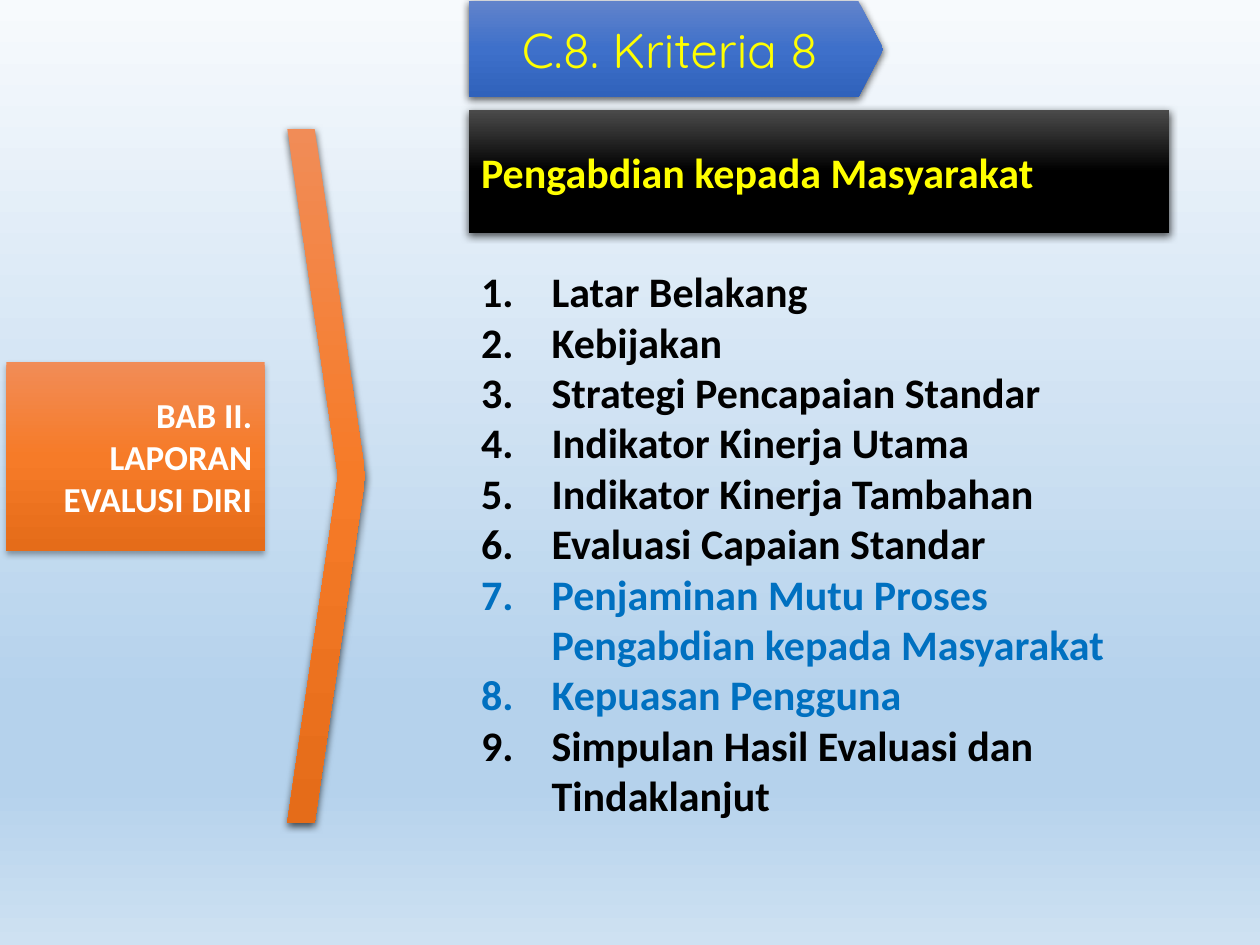
from lxml.etree import SubElement
from pptx import Presentation
from pptx.dml.color import RGBColor
from pptx.enum.shapes import MSO_SHAPE
from pptx.enum.text import MSO_ANCHOR, MSO_AUTO_SIZE, PP_ALIGN
from pptx.oxml.ns import qn
from pptx.util import Inches, Pt

BLACK = RGBColor(0x00, 0x00, 0x00)
WHITE = RGBColor(0xFF, 0xFF, 0xFF)
YELLOW = RGBColor(0xFF, 0xFF, 0x00)
BLUE = RGBColor(0x00, 0x70, 0xC0)

# Gradient stops: position in percent, colour
SKY = [(0, RGBColor(0xF7, 0xFA, 0xFD)), (74, RGBColor(0xB5, 0xD2, 0xEC)),
       (83, RGBColor(0xB5, 0xD2, 0xEC)), (100, RGBColor(0xCE, 0xE1, 0xF2))]
DARK = [(0, RGBColor(0x4B, 0x4B, 0x4B)), (50, BLACK), (100, BLACK)]
ORANGE = [(0, RGBColor(0xF1, 0x8C, 0x57)), (50, RGBColor(0xF6, 0x7B, 0x28)),
          (100, RGBColor(0xE5, 0x6C, 0x19))]
NAVY = [(0, RGBColor(0x61, 0x83, 0xCB)), (50, RGBColor(0x3E, 0x70, 0xCA)),
        (100, RGBColor(0x30, 0x62, 0xBB))]

ITEMS = [
    ("Latar Belakang", BLACK),
    ("Kebijakan", BLACK),
    ("Strategi Pencapaian Standar", BLACK),
    ("Indikator Kinerja Utama", BLACK),
    ("Indikator Kinerja Tambahan", BLACK),
    ("Evaluasi Capaian Standar", BLACK),
    ("Penjaminan Mutu Proses Pengabdian kepada Masyarakat", BLUE),
    ("Kepuasan Pengguna", BLUE),
    ("Simpulan Hasil Evaluasi dan Tindaklanjut", BLACK),
]


def add_color(parent, color, alpha=None):
    node = SubElement(parent, qn("a:srgbClr"), val=str(color))
    if alpha is not None:
        SubElement(node, qn("a:alpha"), val=str(alpha * 1000))


def shade(fill, root, stops):
    """Fill from top to bottom; root is the XML element that holds the fill."""
    fill.gradient()
    fill.gradient_angle = 270
    group = next(root.iter(qn("a:gsLst")))
    for old in list(group):
        group.remove(old)
    for pos, color in stops:
        add_color(SubElement(group, qn("a:gs"), pos=str(pos * 1000)), color)


def add_shadow(shape, alpha, blur, dist):
    shape.shadow.inherit = False
    effects = shape._element.spPr.find(qn("a:effectLst"))
    outer = SubElement(effects, qn("a:outerShdw"), blurRad=str(Pt(blur)),
                       dist=str(Pt(dist)), dir="5400000", rotWithShape="0")
    add_color(outer, BLACK, alpha)


def style(par, size, color, font="Calibri", bold=True):
    for run in par.runs:
        run.font.size = Pt(size)
        run.font.name = font
        run.font.bold = bold
        run.font.color.rgb = color


def add_block(slide, kind, box, stops, shadow=(63, 4.5, 1.5), adjust=None):
    shape = slide.shapes.add_shape(kind, *map(Inches, box))
    shade(shape.fill, shape._element.spPr, stops)
    shape.line.fill.background()
    add_shadow(shape, *shadow)
    if adjust is not None:
        shape.adjustments[0] = adjust
    return shape


def add_label(shape, text, align, size, color, **look):
    frame = shape.text_frame
    frame.text = text
    frame.word_wrap = True
    frame.vertical_anchor = MSO_ANCHOR.MIDDLE
    par = frame.paragraphs[0]
    par.alignment = align
    style(par, size, color, **look)


def add_chapter(slide, box):
    """Orange chapter box and the tall chevron to its right."""
    left, top, width, height = box
    card = add_block(slide, MSO_SHAPE.RECTANGLE, (left, top + 1.85, 2.05, 1.5),
                     ORANGE, shadow=(32, 3.5, 2.2))
    add_label(card, "BAB II. LAPORAN EVALUSI DIRI", PP_ALIGN.RIGHT, 20, WHITE)
    add_block(slide, MSO_SHAPE.CHEVRON, (left + width - 0.62, top, 0.62, height),
              ORANGE, adjust=0.65)


def add_heading(slide, box):
    """Criterion tag above the black title bar."""
    left, top, width, height = box
    bar = add_block(slide, MSO_SHAPE.RECTANGLE,
                    (left, top + height - 0.98, width, 0.98), DARK)
    add_label(bar, "Pengabdian kepada Masyarakat", PP_ALIGN.LEFT, 24, YELLOW)
    tag = add_block(slide, MSO_SHAPE.PENTAGON, (left, top, 3.29, 0.76), NAVY,
                    adjust=0.26)
    add_label(tag, "C.8. Kriteria 8", PP_ALIGN.CENTER, 28, YELLOW,
              font="Quicksand", bold=False)


def add_list(slide, box):
    frame = slide.shapes.add_textbox(*map(Inches, box)).text_frame
    frame.word_wrap = True
    frame.auto_size = MSO_AUTO_SIZE.SHAPE_TO_FIT_TEXT
    frame.text = "\n".join(text for text, _ in ITEMS)
    for par, (_, color) in zip(frame.paragraphs, ITEMS):
        style(par, 24, color)
        props = par._p.get_or_add_pPr()
        props.set("marL", str(Inches(0.56)))
        props.set("indent", str(-Inches(0.56)))
        SubElement(props, qn("a:buFont"), typeface="+mj-lt")
        SubElement(props, qn("a:buAutoNum"), type="arabicPeriod")


def main():
    deck = Presentation()
    deck.slide_width, deck.slide_height = Inches(10), Inches(7.5)
    slide = deck.slides.add_slide(deck.slide_layouts[6])
    shade(slide.background.fill, slide._element, SKY)
    add_heading(slide, (3.72, 0.01, 5.56, 1.84))
    add_list(slide, (3.72, 2.06, 5.56, 4.54))
    add_chapter(slide, (0.05, 1.02, 2.85, 5.51))
    deck.save("out.pptx")


if __name__ == "__main__":
    main()
